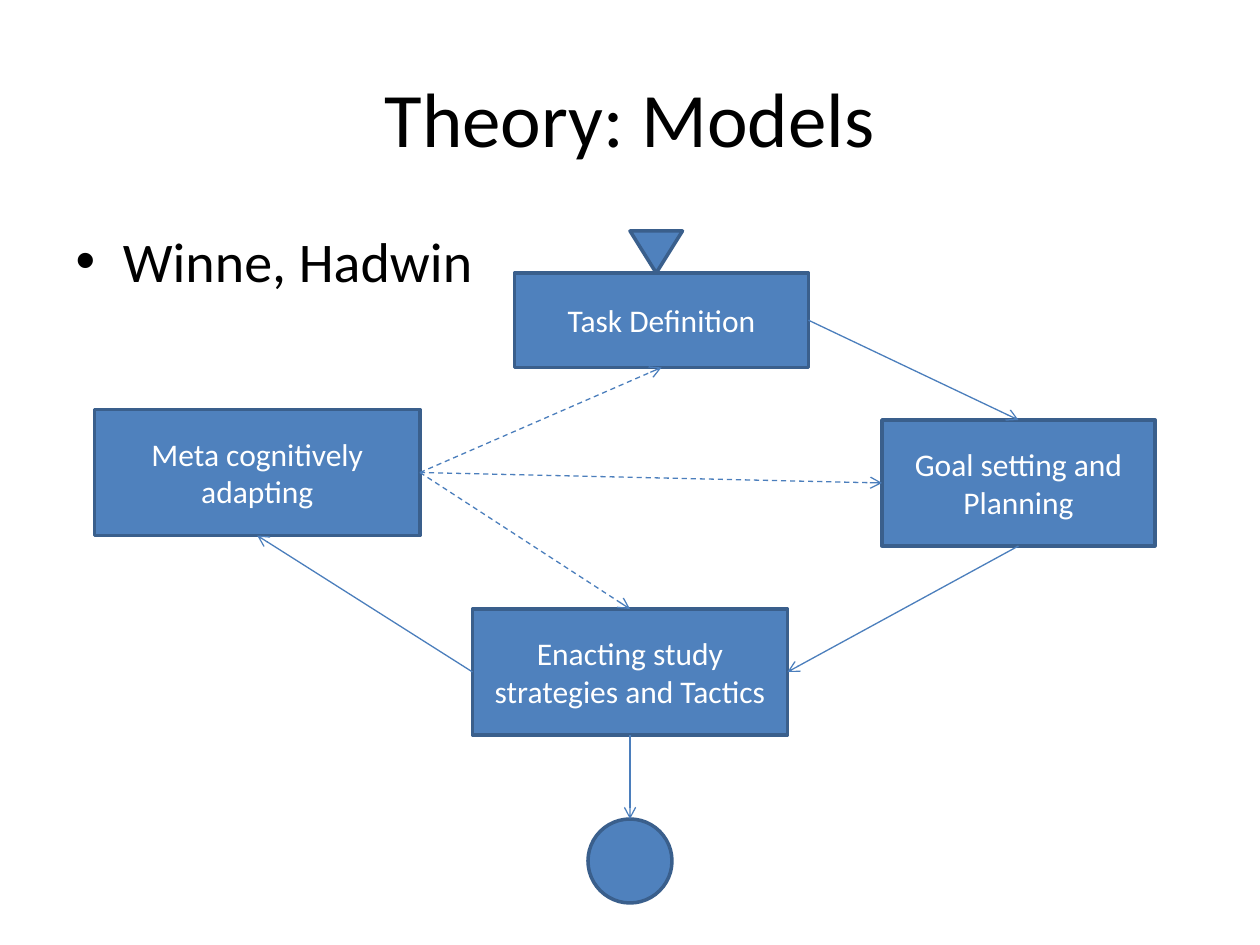
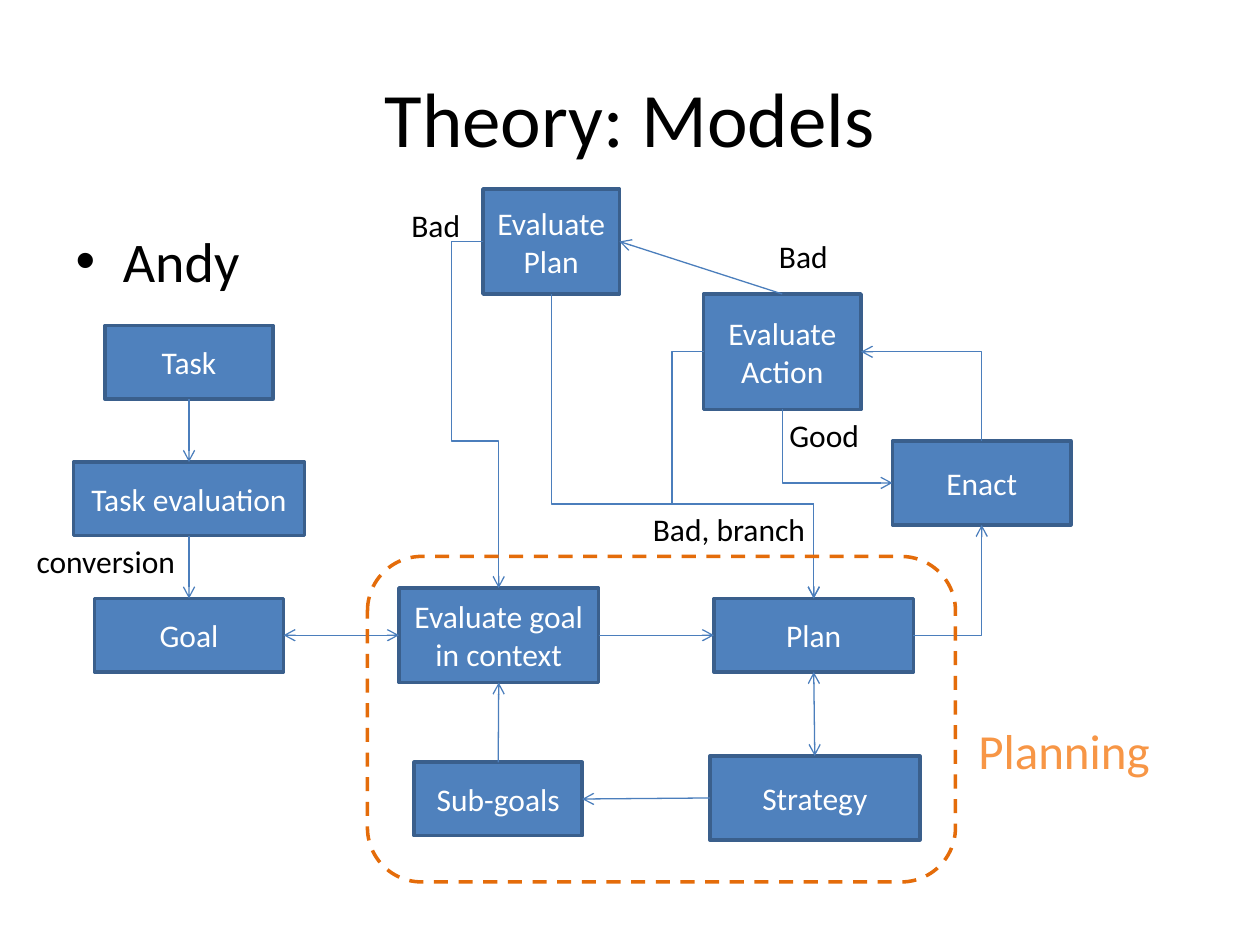
from dataclasses import dataclass
from enum import IntEnum
from typing import Optional

from lxml import etree
from pptx import Presentation
from pptx import util as u
from pptx.dml.color import RGBColor
from pptx.enum import dml, shapes, text
from pptx.oxml import ns

COLUMNS, ROWS = 120, 90
WIDTH, HEIGHT = u.Inches(10), u.Inches(7.5)
SHAPE = shapes.MSO_SHAPE


@dataclass(frozen=True)
class Theme:
    font: str = "Calibri"
    ink: str = "000000"
    paper: str = "FFFFFF"
    box_fill: str = "4F81BD"
    box_line: str = "3A5F8C"
    link: str = "4B7EBC"
    frame: str = "E46C0A"
    accent: str = "F79646"
    title_size: int = 44
    list_size: int = 32
    group_size: int = 28
    text_size: int = 18
    box_weight: float = 2
    link_weight: float = 0.75


THEME = Theme()


class Side(IntEnum):
    TOP = 0
    LEFT = 1
    BOTTOM = 2
    RIGHT = 3


TOP, LEFT, BOTTOM, RIGHT = Side


@dataclass(frozen=True)
class Area:
    column: float
    row: float
    columns: float
    rows: float

    def place(self) -> tuple:
        return (across(self.column), down(self.row),
                across(self.columns), down(self.rows))


@dataclass(frozen=True)
class Box:
    name: str
    area: Area
    caption: str = ""
    kind: SHAPE = SHAPE.RECTANGLE
    rotation: float = 0


@dataclass(frozen=True)
class Link:
    start: str
    start_side: Side
    end: str
    end_side: Side
    dashed: bool = False
    head: bool = False
    tail: bool = True


@dataclass(frozen=True)
class Elbow(Link):
    bend_column: Optional[float] = None
    bend_row: Optional[float] = None


@dataclass(frozen=True)
class Label:
    caption: str
    area: Area
    size: int = THEME.text_size
    color: str = THEME.ink


@dataclass(frozen=True)
class Model:
    author: str
    boxes: list
    links: list
    labels: list
    frame: Optional[Area] = None


def across(columns: float) -> int:
    return round(WIDTH * columns / COLUMNS)


def down(rows: float) -> int:
    return round(HEIGHT * rows / ROWS)


def format_text(frame, size: int, color: str, alignment=None) -> None:
    for paragraph in frame.paragraphs:
        if alignment is not None:
            paragraph.alignment = alignment
        for run in paragraph.runs:
            run.font.name = THEME.font
            run.font.size = u.Pt(size)
            run.font.color.rgb = RGBColor.from_string(color)


def format_line(line, color: str, weight: float, dashed: bool = False) -> None:
    line.color.rgb = RGBColor.from_string(color)
    line.width = u.Pt(weight)
    if dashed:
        line.dash_style = dml.MSO_LINE.DASH


def fill_placeholder(shape, area: Area, content: str, size: int, alignment) -> None:
    shape.left, shape.top, shape.width, shape.height = area.place()
    shape.text_frame.text = content
    format_text(shape.text_frame, size, THEME.ink, alignment)


def draw_box(slide, box: Box):
    shape = slide.shapes.add_shape(box.kind, *box.area.place())
    shape.shadow.inherit = False
    shape.rotation = box.rotation
    shape.fill.solid()
    shape.fill.fore_color.rgb = RGBColor.from_string(THEME.box_fill)
    format_line(shape.line, THEME.box_line, THEME.box_weight)
    if box.caption:
        frame = shape.text_frame
        frame.text = box.caption
        frame.word_wrap = True
        frame.vertical_anchor = text.MSO_ANCHOR.MIDDLE
        format_text(frame, THEME.text_size, THEME.paper, text.PP_ALIGN.CENTER)
    return shape


def draw_frame(slide, area: Area) -> None:
    shape = slide.shapes.add_shape(SHAPE.ROUNDED_RECTANGLE, *area.place())
    shape.shadow.inherit = False
    shape.fill.background()
    format_line(shape.line, THEME.frame, THEME.box_weight, dashed=True)


def draw_label(slide, label: Label) -> None:
    frame = slide.shapes.add_textbox(*label.area.place()).text_frame
    frame.text = label.caption
    frame.word_wrap = False
    frame.auto_size = text.MSO_AUTO_SIZE.SHAPE_TO_FIT_TEXT
    format_text(frame, label.size, label.color, text.PP_ALIGN.LEFT)


def bend(connector, link: Elbow) -> None:
    left, top = connector.begin_x, connector.begin_y
    width, height = connector.end_x - left, connector.end_y - top
    properties = connector.element.spPr
    frame = properties.find(ns.qn("a:xfrm"))
    shares = []
    if link.bend_column is not None:
        shares.append((across(link.bend_column) - left) / width)
    if link.bend_row is not None:
        shares.append((down(link.bend_row) - top) / height)
    if len(shares) == 2:
        turn = {"rot": "10800000", "flipH": "1", "flipV": "1"}
    elif shares:
        connector.left = left + (width - height) // 2
        connector.top = top + (height - width) // 2
        connector.width, connector.height = height, width
        turn = {"rot": "16200000", "flipH": "1"}
    else:
        turn = {}
    for name, value in turn.items():
        frame.set(name, value)
    geometry = properties.find(ns.qn("a:prstGeom"))
    geometry.set("prst", f"bentConnector{len(shares) + 2}")
    guides = geometry.find(ns.qn("a:avLst"))
    for number, share in enumerate(shares, 1):
        name = "adj1" if len(shares) == 1 else f"adj{number}"
        etree.SubElement(guides, ns.qn("a:gd"), name=name,
                         fmla=f"val {round(share * 100000)}")


def draw_link(slide, link: Link, drawn: dict) -> None:
    elbow = isinstance(link, Elbow)
    kind = shapes.MSO_CONNECTOR.ELBOW if elbow else shapes.MSO_CONNECTOR.STRAIGHT
    connector = slide.shapes.add_connector(kind, 0, 0, 0, 0)
    connector.begin_connect(drawn[link.start], int(link.start_side))
    connector.end_connect(drawn[link.end], int(link.end_side))
    if elbow:
        bend(connector, link)
    format_line(connector.line, THEME.link, THEME.link_weight, link.dashed)
    properties = connector.element.spPr
    line = properties.find(ns.qn("a:ln"))
    for tag, shown in (("a:headEnd", link.head), ("a:tailEnd", link.tail)):
        if shown:
            etree.SubElement(line, ns.qn(tag), type="arrow")
    etree.SubElement(properties, ns.qn("a:effectLst"))


def draw_model(presentation, model: Model) -> None:
    slide = presentation.slides.add_slide(presentation.slide_layouts[1])
    title, body = slide.placeholders
    fill_placeholder(title, Area(6, 3.6, 108, 15), "Theory: Models",
                     THEME.title_size, text.PP_ALIGN.CENTER)
    fill_placeholder(body, Area(6, 21, 108, 59.4), model.author,
                     THEME.list_size, text.PP_ALIGN.LEFT)
    drawn = {box.name: draw_box(slide, box) for box in model.boxes}
    for link in model.links:
        draw_link(slide, link, drawn)
    if model.frame:
        draw_frame(slide, model.frame)
    for label in model.labels:
        draw_label(slide, label)


CYCLE = Model(
    author="Winne, Hadwin",
    boxes=[
        Box("task", Area(49, 26, 28, 9), "Task Definition"),
        Box("planning", Area(84, 40, 26, 12), "Goal setting and Planning"),
        Box("enacting", Area(45, 58, 30, 12), "Enacting study strategies and Tactics"),
        Box("adapting", Area(9, 39, 31, 12), "Meta cognitively adapting"),
        Box("entry", Area(60, 22, 5, 4), kind=SHAPE.ISOSCELES_TRIANGLE, rotation=180),
        Box("finish", Area(56, 78, 8, 8), kind=SHAPE.OVAL),
    ],
    links=[
        Link("task", RIGHT, "planning", TOP),
        Link("planning", BOTTOM, "enacting", RIGHT),
        Link("enacting", LEFT, "adapting", BOTTOM),
        Link("adapting", RIGHT, "task", BOTTOM, dashed=True),
        Link("adapting", RIGHT, "planning", LEFT, dashed=True),
        Link("adapting", RIGHT, "enacting", TOP, dashed=True),
        Link("enacting", BOTTOM, "finish", TOP),
    ],
    labels=[],
)

PROCESS = Model(
    author="Andy",
    boxes=[
        Box("task", Area(10, 31, 16, 7), "Task"),
        Box("goal", Area(9, 57, 18, 7), "Goal"),
        Box("task evaluation", Area(7, 44, 22, 7), "Task evaluation"),
        Box("plan", Area(68, 57, 19, 7), "Plan"),
        Box("strategy", Area(67.6, 72, 20, 8), "Strategy"),
        Box("sub-goals", Area(39.45, 72.6, 16, 7), "Sub-goals"),
        Box("context", Area(38, 56, 19, 9), "Evaluate goal in context"),
        Box("enact", Area(85, 42, 17, 8), "Enact"),
        Box("action check", Area(67, 28, 15, 11), "Evaluate\nAction"),
        Box("plan check", Area(46, 18, 13, 10), "Evaluate Plan"),
    ],
    links=[
        Link("task", BOTTOM, "task evaluation", TOP),
        Link("task evaluation", BOTTOM, "goal", TOP),
        Link("context", RIGHT, "plan", LEFT),
        Link("strategy", LEFT, "sub-goals", RIGHT),
        Link("sub-goals", TOP, "context", BOTTOM),
        Link("goal", RIGHT, "context", LEFT, head=True),
        Link("action check", TOP, "plan check", RIGHT),
        Link("plan", BOTTOM, "strategy", TOP, head=True),
        Elbow("plan", RIGHT, "enact", BOTTOM),
        Elbow("action check", RIGHT, "enact", TOP, head=True, tail=False),
        Elbow("enact", LEFT, "action check", BOTTOM, head=True, tail=False),
        Elbow("action check", LEFT, "plan", TOP, bend_column=64, bend_row=48),
        Elbow("plan check", LEFT, "context", TOP, bend_column=43, bend_row=42),
        Elbow("plan check", BOTTOM, "plan", TOP, bend_row=48),
    ],
    labels=[
        Label("conversion", Area(2.3, 51, 15.7, 4.8)),
        Label("Good", Area(74, 39, 9.1, 4.8)),
        Label("Bad", Area(73, 22, 7.1, 4.8)),
        Label("Bad, branch", Area(61, 48, 17, 4.8)),
        Label("Bad", Area(38, 19, 7.1, 4.8)),
        Label("Planning", Area(92, 68, 19, 6.8), THEME.group_size, THEME.accent),
    ],
    frame=Area(35, 53, 56, 31),
)


def main() -> None:
    presentation = Presentation()
    presentation.slide_width, presentation.slide_height = WIDTH, HEIGHT
    for model in (CYCLE, PROCESS):
        draw_model(presentation, model)
    presentation.save("out.pptx")


if __name__ == "__main__":
    main()
